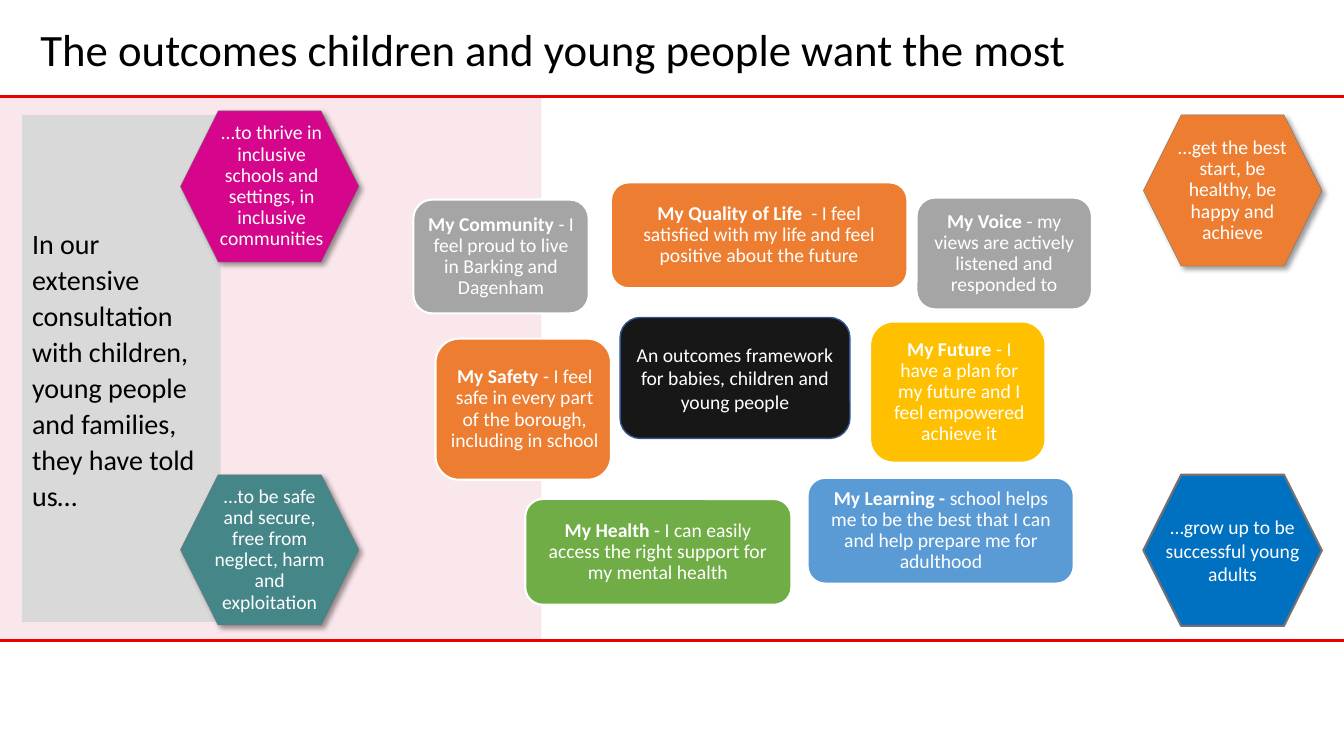
"""Build the slide on the outcomes that children and young people want the most."""
from dataclasses import dataclass

import pptx
import pptx.dml.color
import pptx.enum.shapes
import pptx.enum.text
import pptx.oxml
import pptx.oxml.ns
import pptx.util
from pptx.shapes.autoshape import Shape
from pptx.slide import Slide

EMU_PER_PX = 9144
SLIDE_WIDTH, SLIDE_HEIGHT = 1333, 750
FONT = "Calibri"
COLOURS = {
    "black": "000000", "white": "FFFFFF", "red": "EA0000", "blush": "FAE7EC",
    "panel": "D9D9D9", "orange": "ED7D31", "grey": "A5A5A5", "yellow": "FFC000",
    "green": "70AD47", "sky": "5B9BD5", "ink": "181717", "navy": "325491",
    "magenta": "D6068C", "teal": "458688", "blue": "0070C0", "edge": "767171",
}
ALIGN = pptx.enum.text.PP_ALIGN
ANCHOR = pptx.enum.text.MSO_ANCHOR
SHAPE = pptx.enum.shapes.MSO_SHAPE
SHADOW_XML = (
    f'<a:outerShdw {pptx.oxml.ns.nsdecls("a")} blurRad="50800" dist="38100" dir="2700000" '
    'algn="tl" rotWithShape="0"><a:srgbClr val="000000"><a:alpha val="40000"/>'
    "</a:srgbClr></a:outerShdw>"
)


@dataclass(frozen=True)
class Box:
    left: int
    top: int
    width: int
    height: int


@dataclass(frozen=True)
class Margins:
    left: int = 10
    top: int = 5
    right: int = 10
    bottom: int = 5


@dataclass(frozen=True)
class TextStyle:
    size: int = 14
    colour: str = "white"
    align: ALIGN = ALIGN.CENTER
    spacing: float = 1.0
    anchor: ANCHOR = ANCHOR.MIDDLE


@dataclass(frozen=True)
class Card:
    box: Box
    fill: str
    heading: str
    text: str
    left_margin: int = 6
    right_margin: int = 6


@dataclass(frozen=True)
class Wish:
    box: Box
    fill: str
    text: str
    right_margin: int = 5


COMPACT = TextStyle(spacing=0.9)
CARDS = [
    Card(Box(863, 319, 174, 140), "yellow", "My Future ",
         "- I have a plan for my future and I feel empowered achieve it", 9, 6),
    Card(Box(909, 196, 174, 111), "grey", "My Voice ",
         "- my views are actively listened and responded to"),
    Card(Box(606, 181, 294, 105), "orange", "My Quality of Life  ",
         "- I feel satisfied with my life and feel positive about the future", 10, 10),
    Card(Box(410, 198, 174, 113), "grey", "My Community ",
         "- I feel proud to live in Barking and Dagenham"),
    Card(Box(432, 336, 174, 140), "orange", "My Safety ",
         "- I feel safe in every part of the borough, including in school", 6, 3),
    Card(Box(521, 495, 264, 105), "green", "My Health ",
         "- I can easily access the right support for my mental health", 9, 10),
    Card(Box(801, 474, 264, 105), "sky", "My Learning - ",
         "school helps me to be the best that I can and help prepare me for adulthood", 10, 9),
]
WISHES = [
    Wish(Box(179, 110, 177, 150), "magenta",
         "…to thrive in inclusive schools and settings, in inclusive communities", 1),
    Wish(Box(179, 471, 177, 149), "teal",
         "…to be safe and secure, free from neglect, harm and exploitation"),
    Wish(Box(1134, 114, 177, 150), "orange",
         "…get the best start, be healthy, be happy and achieve"),
]


def px(length: int) -> pptx.util.Emu:
    """Turn px into EMU."""
    return pptx.util.Emu(length * EMU_PER_PX)


def place(box: Box) -> tuple[pptx.util.Emu, ...]:
    """Give the four lengths of a box in EMU."""
    return px(box.left), px(box.top), px(box.width), px(box.height)


def rgb(name: str) -> pptx.dml.color.RGBColor:
    """Look up a named colour."""
    return pptx.dml.color.RGBColor.from_string(COLOURS[name])


def add_filled(slide: Slide, kind: SHAPE, box: Box, fill: str,
               line: str | None = None, line_width: float = 1.0) -> Shape:
    """Add a preset shape with a solid fill and an optional outline."""
    shape = slide.shapes.add_shape(kind, *place(box))
    shape.shadow.inherit = False
    shape.fill.solid()
    shape.fill.fore_color.rgb = rgb(fill)
    if line is None:
        shape.line.fill.background()
    else:
        shape.line.color.rgb = rgb(line)
        shape.line.width = pptx.util.Pt(line_width)
    return shape


def write(shape: Shape, text: str, style: TextStyle, margins: Margins = Margins(),
          heading: str = "") -> None:
    """Write one paragraph, led by an optional bold heading."""
    frame = shape.text_frame
    frame.text = heading or text
    frame.word_wrap = True
    frame.auto_size = pptx.enum.text.MSO_AUTO_SIZE.NONE
    frame.vertical_anchor = style.anchor
    frame.margin_left, frame.margin_right = px(margins.left), px(margins.right)
    frame.margin_top, frame.margin_bottom = px(margins.top), px(margins.bottom)
    paragraph = frame.paragraphs[0]
    paragraph.alignment = style.align
    paragraph.line_spacing = style.spacing
    if heading:
        paragraph.runs[0].font.bold = True
        paragraph.add_run().text = text
    for run in paragraph.runs:
        run.font.name = FONT
        run.font.size = pptx.util.Pt(style.size)
        run.font.color.rgb = rgb(style.colour)


def add_rule(slide: Slide, top: int) -> None:
    """Add a red line across the slide."""
    rule = slide.shapes.add_connector(pptx.enum.shapes.MSO_CONNECTOR.STRAIGHT,
                                      0, px(top), px(SLIDE_WIDTH), px(top))
    rule.line.color.rgb = rgb("red")
    rule.line.width = pptx.util.Pt(2.25)
    rule._element.spPr.append(pptx.oxml.parse_xml(f'<a:effectLst {pptx.oxml.ns.nsdecls("a")}/>'))


def add_card(slide: Slide, card: Card) -> None:
    """Add a rounded outcome card."""
    shape = add_filled(slide, SHAPE.ROUNDED_RECTANGLE, card.box, card.fill, "white", 1.5)
    write(shape, card.text, COMPACT, Margins(card.left_margin, 6, card.right_margin, 6),
          card.heading)


def add_wish(slide: Slide, wish: Wish) -> None:
    """Add a hexagon with a soft shadow."""
    shape = add_filled(slide, SHAPE.HEXAGON, wish.box, wish.fill, "edge", 0.25)
    effects = shape._element.spPr.find(pptx.oxml.ns.qn("a:effectLst"))
    effects.append(pptx.oxml.parse_xml(SHADOW_XML))
    write(shape, wish.text, COMPACT, Margins(5, 7, wish.right_margin, 7))


def main() -> None:
    """Build and save the slide."""
    presentation = pptx.Presentation()
    presentation.slide_width, presentation.slide_height = px(SLIDE_WIDTH), px(SLIDE_HEIGHT)
    slide = presentation.slides.add_slide(presentation.slide_layouts[5])

    title = slide.shapes.title
    title.left, title.top, title.width, title.height = place(Box(30, 20, 1276, 61))
    write(title, "The outcomes children and young people want the most",
          TextStyle(32, "black", ALIGN.LEFT, 0.9, ANCHOR.BOTTOM))

    add_filled(slide, SHAPE.RECTANGLE, Box(0, 96, 537, 538), "blush")
    for top in (96, 635):
        add_rule(slide, top)

    panel = add_filled(slide, SHAPE.RECTANGLE, Box(22, 114, 197, 503), "panel")
    write(panel, "In our extensive consultation with children, young people and families, "
          "they have told us…", TextStyle(20, "black", ALIGN.LEFT, 1.07))

    for card in CARDS:
        add_card(slide, card)
    framework = add_filled(slide, SHAPE.ROUNDED_RECTANGLE, Box(615, 315, 228, 120), "ink", "navy")
    write(framework, "An outcomes framework for babies, children and young people", TextStyle())

    for wish in WISHES:
        add_wish(slide, wish)
    adult_box = Box(1134, 471, 177, 150)
    add_filled(slide, SHAPE.HEXAGON, adult_box, "blue", "edge", 1.5)
    adult_label = slide.shapes.add_textbox(*place(adult_box))
    write(adult_label, "…grow up to be successful young adults", TextStyle())

    presentation.save("out.pptx")


if __name__ == "__main__":
    main()
